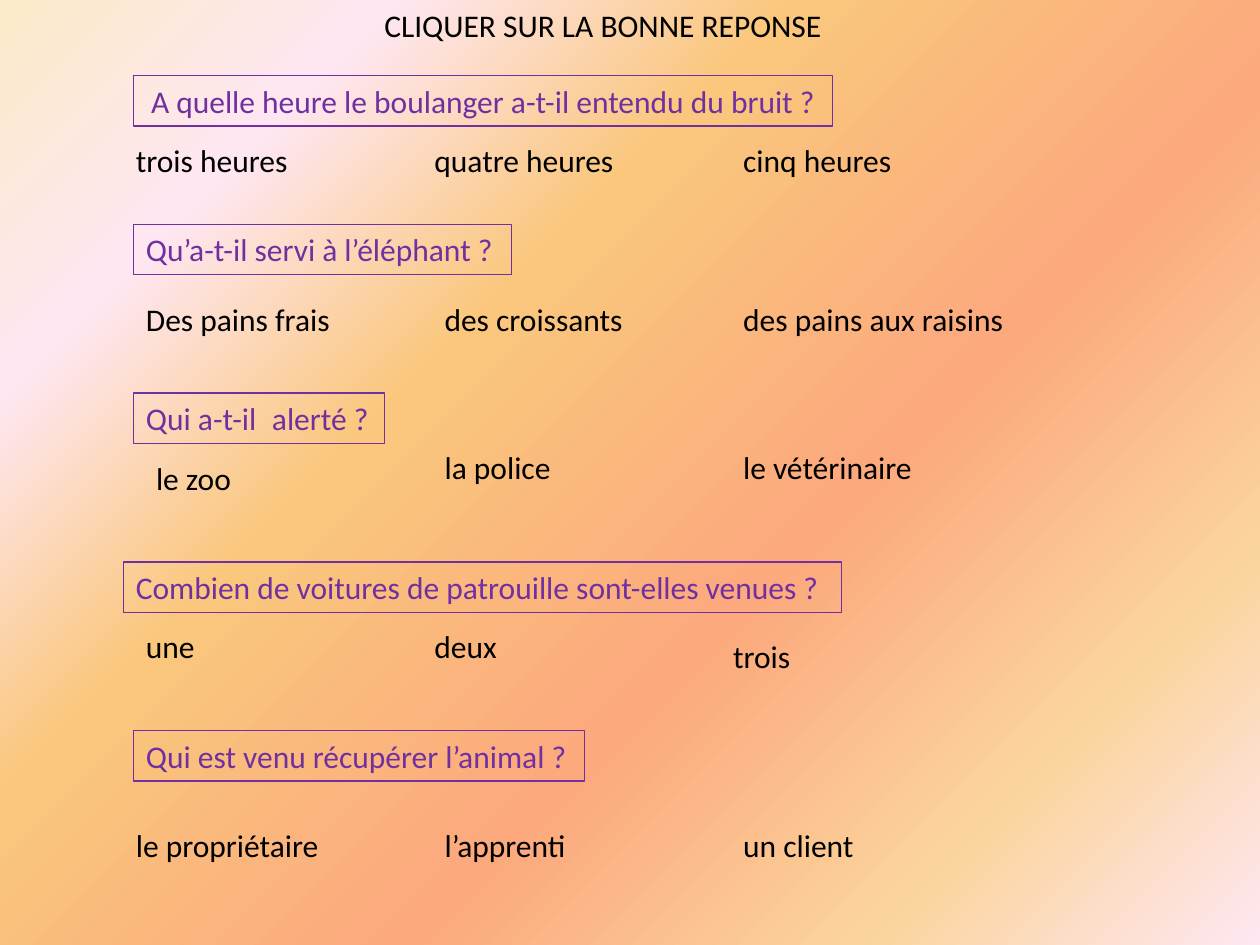
"""Build a French reading quiz slide with five boxed questions and three answers each."""
from lxml.etree import SubElement
from pptx import Presentation
from pptx.dml.color import RGBColor
from pptx.enum.shapes import MSO_SHAPE
from pptx.enum.text import MSO_ANCHOR, MSO_AUTO_SIZE, PP_ALIGN
from pptx.oxml.ns import qn
from pptx.util import Inches, Pt

COLOURS = {"question": "7030A0", "answer": "000000"}
GRADIENT = [(0, "FBEAC7"), (18, "FEE7F2"), (36, "FAC77D"),
            (61, "FBA97D"), (82, "FBD49C"), (100, "FEE7F2")]
TITLE = "CLIQUER SUR LA BONNE REPONSE"

# Each question: text, width, left step, top, answers' top, alignment.
# Each answer: text, width, steps right, steps down.
QUIZ = [
    {"question": ("A quelle heure le boulanger a-t-il entendu du bruit ?", 5.55, 1),
     "tops": (0.6, 1.07), "align": PP_ALIGN.CENTER,
     "answers": [("trois heures", 1.42, 0, 0), ("quatre heures", 1.64, 0, 0),
                 ("cinq heures", 1.39, 1, 0)]},
    {"question": ("Qu’a-t-il servi à l’éléphant ?", 3, 1),
     "tops": (1.78, 2.33), "align": PP_ALIGN.LEFT,
     "answers": [("Des pains frais", 1.68, 1, 0), ("des croissants", 1.63, 1, 0),
                 ("des pains aux raisins", 2.35, 1, 0)]},
    {"question": ("Qui a-t-il \talerté ?", 1.99, 1),
     "tops": (3.12, 3.51), "align": PP_ALIGN.LEFT,
     "answers": [("le zoo", 0.8, 2, 1), ("la police", 1.05, 1, 0),
                 ("le vétérinaire", 1.56, 1, 0)]},
    {"question": ("Combien de voitures de patrouille sont-elles venues ?", 5.7, 0),
     "tops": (4.46, 4.93), "align": PP_ALIGN.LEFT,
     "answers": [("une", 0.59, 1, 0), ("deux", 0.7, 0, 0), ("trois", 0.66, 0, 1)]},
    {"question": ("Qui est venu récupérer l’animal ?", 3.58, 1),
     "tops": (5.8, 6.51), "align": PP_ALIGN.LEFT,
     "answers": [("le propriétaire", 1.67, 0, 0), ("l’apprenti", 1.18, 1, 0),
                 ("un client", 1.09, 1, 0)]},
]
LEFT, COLUMN, STEP, HEIGHT = 0.98, 2.37, 0.08, 0.4


def paint_background(page):
    fill = page.background.fill
    fill.gradient()
    fill.gradient_angle = 315
    stops = next(page.element.iter(qn("a:gsLst")))
    for stop in list(stops):
        stops.remove(stop)
    for percent, colour in GRADIENT:
        stop = SubElement(stops, qn("a:gs"), pos=str(percent * 1000))
        SubElement(stop, qn("a:srgbClr"), val=colour)


def write(box, text, colour, align=PP_ALIGN.LEFT):
    frame = box.text_frame
    frame.text = text
    frame.word_wrap = False
    frame.auto_size = MSO_AUTO_SIZE.SHAPE_TO_FIT_TEXT
    frame.vertical_anchor = MSO_ANCHOR.TOP
    para = frame.paragraphs[0]
    para.alignment = align
    para.line_spacing = 1.0
    para.space_before = Pt(0)
    para.font.name = "Calibri"
    para.font.size = Pt(18)
    para.font.color.rgb = RGBColor.from_string(COLOURS[colour])


def place(left, top, width):
    return Inches(left), Inches(top), Inches(width), Inches(HEIGHT)


def add_question(page, text, width, step, top, align):
    box = page.shapes.add_shape(MSO_SHAPE.RECTANGLE, *place(LEFT + step * STEP, top, width))
    box.shadow.inherit = False
    box.fill.background()
    box.line.color.rgb = RGBColor.from_string(COLOURS["question"])
    box.line.width = Pt(0.75)
    write(box, text, "question", align)


def add_answers(page, answers, top):
    for column, (text, width, right, down) in enumerate(answers):
        left = LEFT + column * COLUMN + right * STEP
        box = page.shapes.add_textbox(*place(left, top + down * STEP, width))
        write(box, text, "answer")


def main():
    deck = Presentation()
    deck.slide_width, deck.slide_height = Inches(10), Inches(7.5)
    page = deck.slides.add_slide(deck.slide_layouts[5])
    paint_background(page)
    title = page.shapes.title
    title.left, title.top, title.width, title.height = place(2.95, 0, 3.7)
    write(title, TITLE, "answer")
    for item in QUIZ:
        question_top, answer_top = item["tops"]
        add_question(page, *item["question"], question_top, item["align"])
        add_answers(page, item["answers"], answer_top)
    deck.save("out.pptx")


if __name__ == "__main__":
    main()
